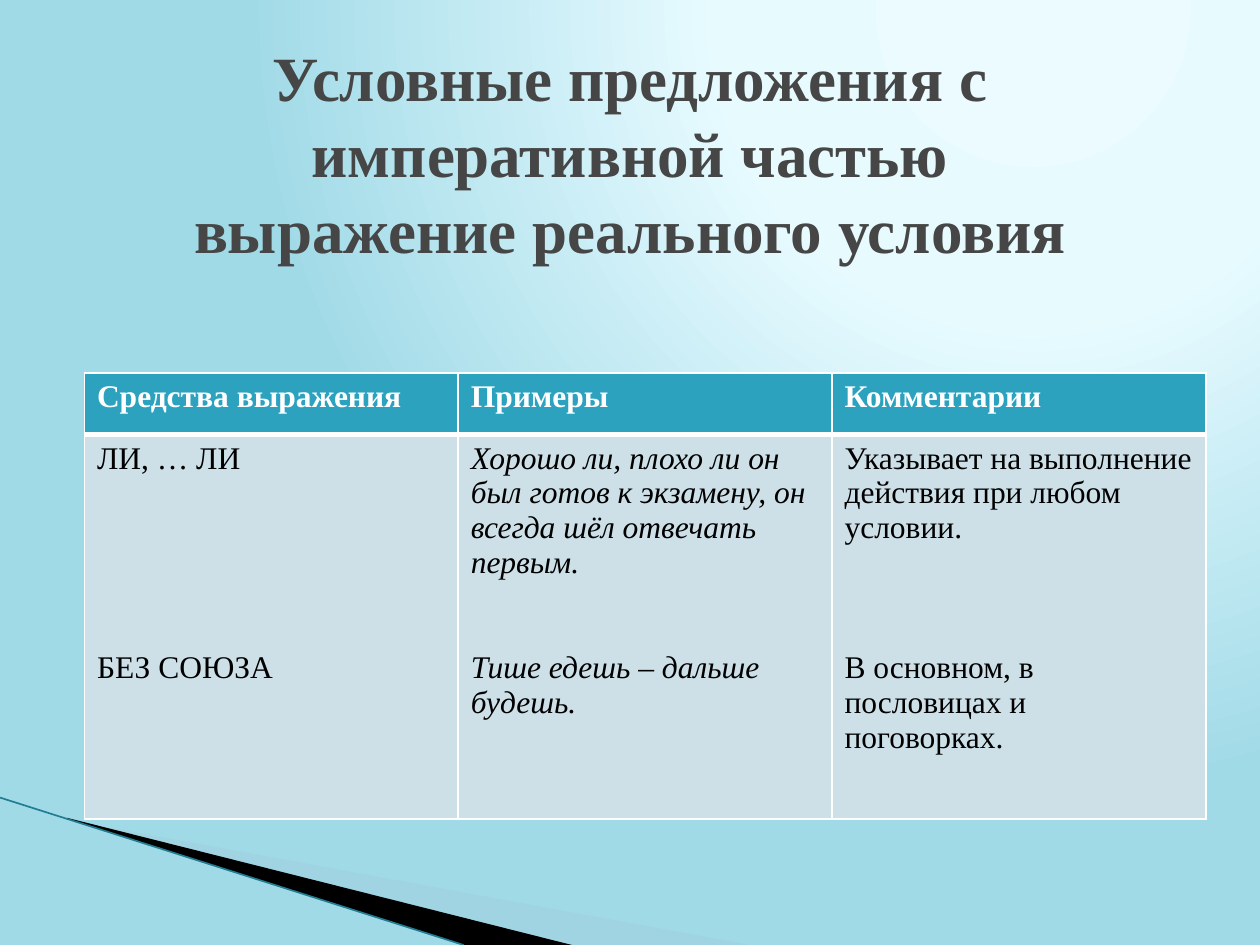
from lxml import etree
from pptx import Presentation
from pptx.dml.color import RGBColor
from pptx.enum import shapes, text
from pptx.oxml import parse_xml
from pptx.oxml.ns import nsdecls, qn
from pptx.util import Inches, Pt

FONT = "Times New Roman"
TITLE = "Условные предложения с императивной частью\vвыражение реального условия"
HEADS = ["Средства выражения", "Примеры", "Комментарии"]
# Two paragraphs per cell, then the number of lines between them
BODY = [
    (["ЛИ, … ЛИ", "БЕЗ СОЮЗА"], 5),
    (["Хорошо ли, плохо ли он был готов к экзамену, он всегда шёл отвечать первым.",
      "Тише едешь – дальше будешь."], 2),
    (["Указывает на выполнение действия при любом условии.",
      "В основном, в пословицах и поговорках."], 3),
]
LINE = 19.93  # height of an 18 pt line
STOPS = [(0, "EBFBFF"), (40, "E7FBFF"), (100, "A1DAE7")]
WEDGES = [
    ([(0.55, 6.51), (5.95, 7.5), (4.56, 7.5), (0.55, 6.5)], "A0CBDC", 40),
    ([(0.53, 6.49), (4.54, 7.5), (3.68, 7.5), (0.54, 6.5)], "000000", 100),
]
HEAD = {"size": Pt(18), "name": FONT, "bold": True}
PLAIN = {**HEAD, "bold": False}
BIG = {**HEAD, "size": Pt(36)}


def rgb(code):
    return RGBColor.from_string(code)


def style(para, look, color):
    for key, value in look.items():
        setattr(para.font, key, value)
    para.font.color.rgb = rgb(color)


def backdrop(slide):
    slide.background.fill.gradient()
    grad = next(slide._element.iter(qn("a:gradFill")))
    stops = "".join(f'<a:gs pos="{pos * 1000}"><a:srgbClr val="{code}"/></a:gs>'
                    for pos, code in STOPS)
    grad.getparent().replace(grad, parse_xml(
        f'<a:gradFill {nsdecls("a")} rotWithShape="1"><a:gsLst>{stops}</a:gsLst>'
        '<a:path path="circle"><a:fillToRect l="65000" t="0" r="0" b="98000"/>'
        '</a:path></a:gradFill>'))


def wedge(slide, points, color, alpha):
    dots = [(Inches(x), Inches(y)) for x, y in points]
    build = slide.shapes.build_freeform(*dots[0])
    build.add_line_segments(dots[1:])
    shape = build.convert_to_shape()
    shape.shadow.inherit = False
    shape.line.fill.background()
    shape.fill.solid()
    shape.fill.fore_color.rgb = rgb(color)
    if alpha < 100:
        tone = next(shape._element.spPr.iter(qn("a:srgbClr")))
        etree.SubElement(tone, qn("a:alpha"), val=str(alpha * 1000))


def paint(cell, color, top, bottom):
    """Fill a cell and give it white borders, widths in points."""
    props = cell._tc.get_or_add_tcPr()
    for side, width in zip("LRTB", (1, 1, top, bottom)):
        props.append(parse_xml(
            f'<a:ln{side} {nsdecls("a")} w="{Pt(width)}"><a:solidFill>'
            f'<a:srgbClr val="FFFFFF"/></a:solidFill></a:ln{side}>'))
    cell.fill.solid()
    cell.fill.fore_color.rgb = rgb(color)


def add_grid(slide):
    grid = slide.shapes.add_table(2, len(HEADS), Inches(0.67), Inches(2.96),
                                  Inches(8.9), Inches(3.54)).table
    for row, height in zip(grid.rows, (0.49, 3.05)):
        row.height = Inches(height)
    for col, (head, (parts, gap)) in enumerate(zip(HEADS, BODY)):
        top, cell = grid.cell(0, col), grid.cell(1, col)
        paint(top, "2DA2BF", 1, 3)
        paint(cell, "CDE0E8", 3, 1)
        top.text = head
        style(top.text_frame.paragraphs[0], HEAD, "FFFFFF")
        cell.text = "\n".join(parts)
        paras = cell.text_frame.paragraphs
        for para in paras:
            style(para, {**PLAIN, "italic": col == 1}, "000000")
        paras[1].space_before = Pt(gap * LINE)


def add_title(slide):
    frame = slide.shapes.add_textbox(Inches(0.5), Inches(0.3),
                                     Inches(9), Inches(2.43)).text_frame
    frame.word_wrap = True
    frame.margin_top = Inches(0.01)
    frame.text = TITLE
    para = frame.paragraphs[0]
    para.alignment = text.PP_ALIGN.CENTER
    para.line_spacing = Pt(43.2)
    style(para, BIG, "464646")


def main():
    deck = Presentation()
    deck.slide_width, deck.slide_height = Inches(10), Inches(7.5)
    slide = deck.slides.add_slide(deck.slide_layouts[6])
    backdrop(slide)
    for item in WEDGES:
        wedge(slide, *item)
    edge = slide.shapes.add_connector(shapes.MSO_CONNECTOR.STRAIGHT, Inches(0),
                                      Inches(6.33), Inches(3.68), Inches(7.5))
    edge.line.width = Pt(0.95)
    edge.line.color.rgb = rgb("227C92")
    etree.SubElement(edge._element.spPr, qn("a:effectLst"))
    add_grid(slide)
    add_title(slide)
    deck.save("out.pptx")


if __name__ == "__main__":
    main()
